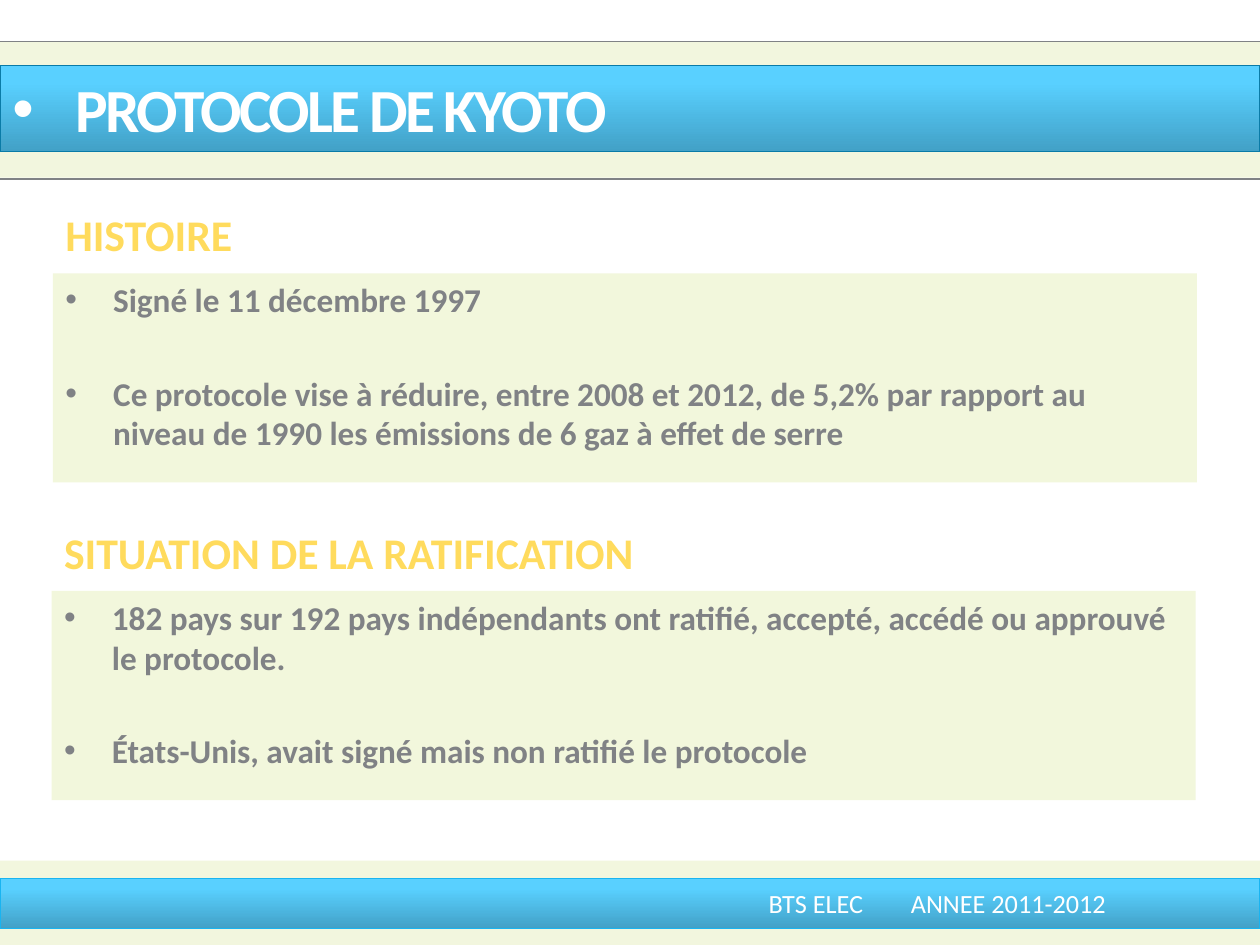
from lxml import etree
from pptx import Presentation
from pptx.dml.color import RGBColor
from pptx.enum.shapes import MSO_CONNECTOR, MSO_SHAPE
from pptx.enum.text import MSO_ANCHOR, PP_ALIGN
from pptx.oxml.ns import qn
from pptx.util import Inches, Pt

RECT = MSO_SHAPE.RECTANGLE
STRAIGHT = MSO_CONNECTOR.STRAIGHT
TOP, MIDDLE = MSO_ANCHOR.TOP, MSO_ANCHOR.MIDDLE
LEFT = PP_ALIGN.LEFT

WHITE = RGBColor(0xFF, 0xFF, 0xFF)
CREAM = RGBColor(0xF2, 0xF6, 0xDE)
LIME = RGBColor(0xCF, 0xE0, 0x74)
GRAY = RGBColor(0x80, 0x82, 0x85)
YELLOW = RGBColor(0xFF, 0xDB, 0x5D)
DEEP_BLUE = RGBColor(0x42, 0xA1, 0xC7)
SKY_BLUE = RGBColor(0x59, 0xD0, 0xFF)
TITLE_EDGE = RGBColor(0x0A, 0x7B, 0xA7)
FOOTER_EDGE = RGBColor(0x19, 0xB4, 0xF1)

FONT = "Calibri"
COLS, ROWS = 100, 75
SECTIONS = [
    (4.2, 16, "HISTOIRE", [
        "Signé le 11 décembre 1997",
        "Ce protocole vise à réduire, entre 2008 et 2012, de 5,2% par rapport au "
        "niveau de 1990 les émissions de 6 gaz à effet de serre"]),
    (4.1, 41.2, "SITUATION DE LA RATIFICATION", [
        "182 pays sur 192 pays indépendants ont ratifié, accepté, accédé ou "
        "approuvé le protocole.",
        "États-Unis, avait signé mais non ratifié le protocole"]),
]


def write(tf, lines, size, color, bold=True, indent=0, gap=0, spacing=0, tab=0, anchor=TOP):
    """Fill a text frame with one formatted paragraph per line."""
    tf.word_wrap = True
    tf.vertical_anchor = anchor
    for i, line in enumerate(lines):
        p = tf.add_paragraph() if i else tf.paragraphs[0]
        p.alignment = LEFT
        if i:
            p.space_before = Pt(gap)
        pPr = p._p.get_or_add_pPr()
        if indent:
            pPr.set("marL", str(Inches(indent)))
            pPr.set("indent", str(-Inches(indent)))
            etree.SubElement(pPr, qn("a:buFont"), typeface="Arial")
            etree.SubElement(pPr, qn("a:buChar"), char="•")
        if tab:
            tabs = etree.SubElement(pPr, qn("a:tabLst"))
            etree.SubElement(tabs, qn("a:tab"), pos=str(Inches(tab)), algn="l")
        r = p.add_run()
        r.text = line
        r.font.name, r.font.size, r.font.bold = FONT, Pt(size), bold
        r.font.color.rgb = color
        if spacing:
            r._r.get_or_add_rPr().set("spc", str(round(spacing * 100)))


class Deck:
    """Hold the grid and the current slide, and draw each kind of element."""

    def __init__(self):
        self.prs = Presentation()
        self.prs.slide_width, self.prs.slide_height = Inches(10), Inches(7.5)
        self.col = self.prs.slide_width / COLS
        self.row = self.prs.slide_height / ROWS
        self.s = self.prs.slides.add_slide(self.prs.slide_layouts[6])

    def place(self, x, y, w, h):
        return round(x * self.col), round(y * self.row), round(w * self.col), round(h * self.row)

    def panel(self, x, y, w, h, color, opacity=100):
        sp = self.s.shapes.add_shape(RECT, *self.place(x, y, w, h))
        sp.shadow.inherit = False
        sp.line.fill.background()
        sp.fill.solid()
        sp.fill.fore_color.rgb = color
        if opacity < 100:
            rgb = sp._element.spPr.find(qn("a:solidFill"))[0]
            etree.SubElement(rgb, qn("a:alpha"), val=str(opacity * 1000))
        return sp

    def banner(self, y, h, edge):
        sp = self.panel(0, y, COLS, h, SKY_BLUE)
        sp.fill.gradient()
        sp.fill.gradient_angle = 90
        for stop, color, pos in zip(sp.fill.gradient_stops, (DEEP_BLUE, SKY_BLUE), (0, 0.8)):
            stop.color.rgb, stop.position = color, pos
        sp.line.color.rgb, sp.line.width = edge, Pt(0.75)
        return sp

    def rule(self, y):
        x1, y1, w, _ = self.place(0, y, COLS, 0)
        cx = self.s.shapes.add_connector(STRAIGHT, x1, y1, x1 + w, y1)
        cx.line.color.rgb, cx.line.width = GRAY, Pt(0.75)
        etree.SubElement(cx._element.spPr, qn("a:effectLst"))

    def section(self, x, y, heading, points):
        body = self.panel(x, y + 5.7, 90.8, 16.6, LIME, opacity=25)
        write(body.text_frame, points, 19, GRAY, indent=0.38, gap=30.5)
        box = self.s.shapes.add_textbox(*self.place(x, y, 67.5, 5))
        write(box.text_frame, [heading], 25, YELLOW)


def main():
    deck = Deck()
    deck.panel(0, 3.3, COLS, 10.8, CREAM)
    deck.panel(0, 68.3, COLS, 6.7, CREAM)
    for y in (14.2, 3.3):
        deck.rule(y)
    title = deck.banner(5.2, 6.8, TITLE_EDGE)
    write(title.text_frame, ["PROTOCOLE DE KYOTO"], 35, WHITE, indent=0.5, spacing=-1.5)
    footer = deck.banner(69.7, 4, FOOTER_EDGE)
    footer.text_frame.margin_left = Inches(6.1)
    write(footer.text_frame, ["BTS ELEC\tANNEE 2011-2012"], 15, WHITE,
          bold=False, tab=1.13, anchor=MIDDLE)
    for section in SECTIONS:
        deck.section(*section)
    deck.prs.save("out.pptx")


if __name__ == "__main__":
    main()
